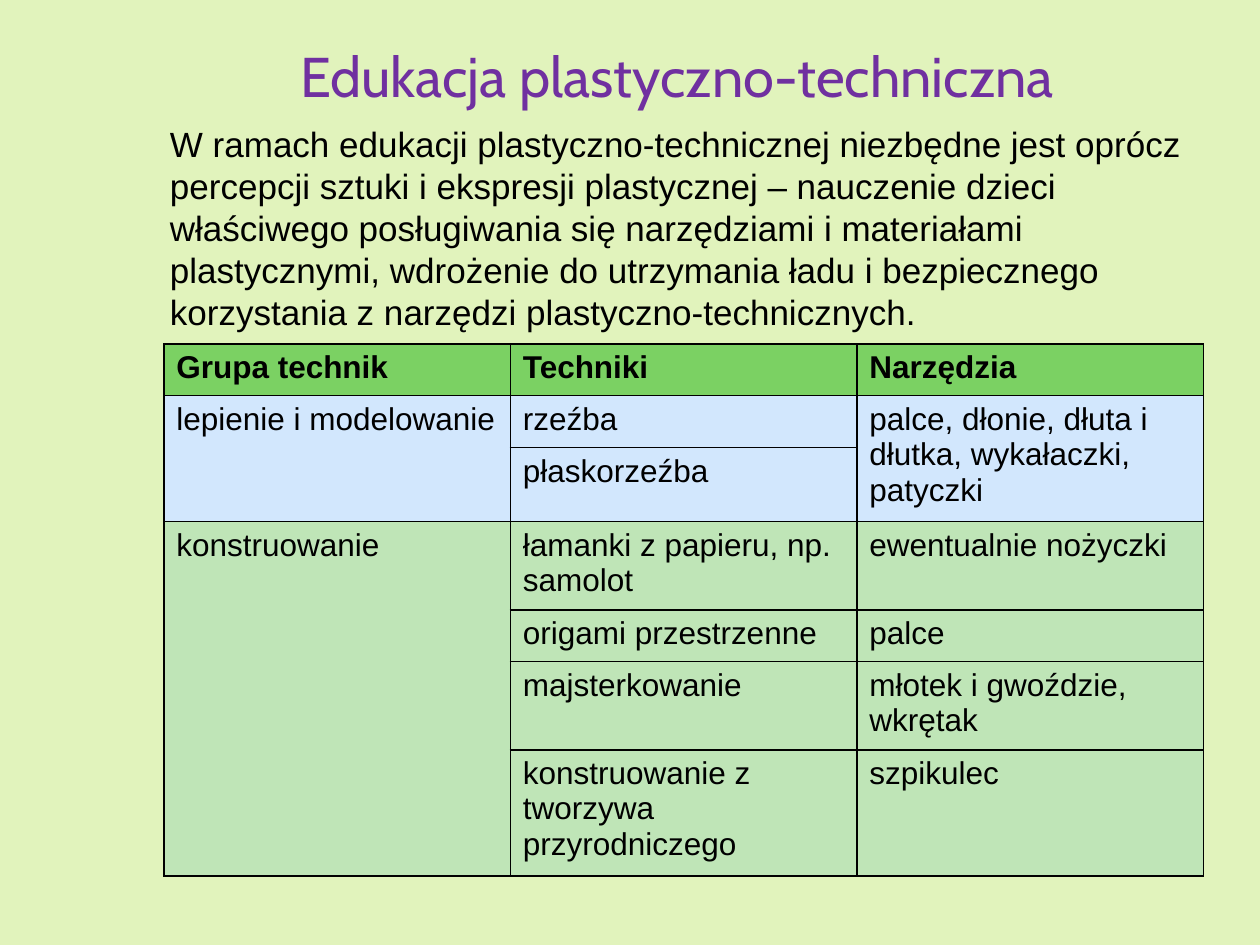
from lxml import etree
from pptx import Presentation
from pptx.dml.color import RGBColor
from pptx.enum.text import MSO_ANCHOR, PP_ALIGN
from pptx.oxml.ns import qn
from pptx.util import Inches, Pt

MIDDLE, TOP = MSO_ANCHOR.MIDDLE, MSO_ANCHOR.TOP
CENTER, LEFT = PP_ALIGN.CENTER, PP_ALIGN.LEFT

HUES = {
    "back": "E1F3BC", "title": "7030A0", "ink": "000000",
    "head": "7BD163", "model": "D2E7FD", "build": "BFE5B7",
}
BODY = (
    "W ramach edukacji plastyczno-technicznej niezbędne jest oprócz "
    "percepcji sztuki i ekspresji plastycznej – nauczenie dzieci "
    "właściwego posługiwania się narzędziami i materiałami plastycznymi, "
    "wdrożenie do utrzymania ładu i bezpiecznego korzystania z narzędzi "
    "plastyczno-technicznych."
)
# Each row: fill name, then the cells; None continues the cell above
ROWS = [
    ("head", "Grupa technik", "Techniki", "Narzędzia"),
    ("model", "lepienie i modelowanie", "rzeźba",
     "palce, dłonie, dłuta i dłutka, wykałaczki, patyczki"),
    ("model", None, "płaskorzeźba", None),
    ("build", "konstruowanie", "łamanki z papieru, np. samolot",
     "ewentualnie nożyczki"),
    ("build", None, "origami przestrzenne", "palce"),
    ("build", None, "majsterkowanie", "młotek i gwoździe, wkrętak"),
    ("build", None, "konstruowanie z tworzywa przyrodniczego", "szpikulec"),
]
MERGES = [((1, 0), (2, 0)), ((1, 2), (2, 2)), ((3, 0), (6, 0))]


def rgb(name):
    return RGBColor.from_string(HUES[name])


class Page:
    """Holds the text style and the current slide."""

    font = {"name": "Arial", "size": Pt(18), "bold": False}

    def __init__(self, slide):
        self.slide = slide
        fill = slide.background.fill
        fill.solid()
        fill.fore_color.rgb = rgb("back")

    def put(self, para, text, hue="ink", **extra):
        run = para.add_run()
        run.text = text
        for key, value in {**self.font, **extra}.items():
            setattr(run.font, key, value)
        run.font.color.rgb = rgb(hue)

    def text(self, box, words, anchor=TOP, align=LEFT, lead=None, **look):
        frame = self.slide.shapes.add_textbox(*map(Inches, box)).text_frame
        frame.word_wrap = True
        frame.vertical_anchor = anchor
        para = frame.paragraphs[0]
        para.alignment = align
        para.line_spacing = lead
        self.put(para, words, **look)

    def edge(self, cell):
        props = cell._tc.get_or_add_tcPr()
        for side in ("lnL", "lnR", "lnT", "lnB"):
            line = etree.SubElement(props, qn("a:" + side), w=str(Pt(1)))
            fill = etree.SubElement(line, qn("a:solidFill"))
            etree.SubElement(fill, qn("a:srgbClr"), val=HUES["ink"])

    def table(self, box, rows, merges):
        size = len(rows), len(rows[0]) - 1
        table = self.slide.shapes.add_table(*size, *map(Inches, box)).table
        for col in table.columns:
            col.width = Inches(box[2] / size[1])
        for r, (hue, *texts) in enumerate(rows):
            table.rows[r].height = Inches(box[3] / size[0])
            for c, words in enumerate(texts):
                cell = table.cell(r, c)
                self.edge(cell)
                cell.fill.solid()
                cell.fill.fore_color.rgb = rgb(hue)
                if words:
                    para = cell.text_frame.paragraphs[0]
                    self.put(para, words, bold=hue == "head")
        for first, last in merges:
            table.cell(*first).merge(table.cell(*last))


def main():
    deck = Presentation()
    deck.slide_width, deck.slide_height = Inches(10), Inches(7.5)
    page = Page(deck.slides.add_slide(deck.slide_layouts[6]))

    # Title and introduction
    page.text((1.25, 0.13, 8.25, 0.93), "Edukacja plastyczno-techniczna",
              MIDDLE, CENTER, name="Cabin", size=Pt(32), hue="title")
    page.text((1.25, 0.92, 8.25, 1.83), BODY, lead=Pt(24), size=Pt(20))

    # Techniques and tools
    page.table((1.3, 2.73, 8.25, 2.87), ROWS, MERGES)
    deck.save("out.pptx")


if __name__ == "__main__":
    main()
